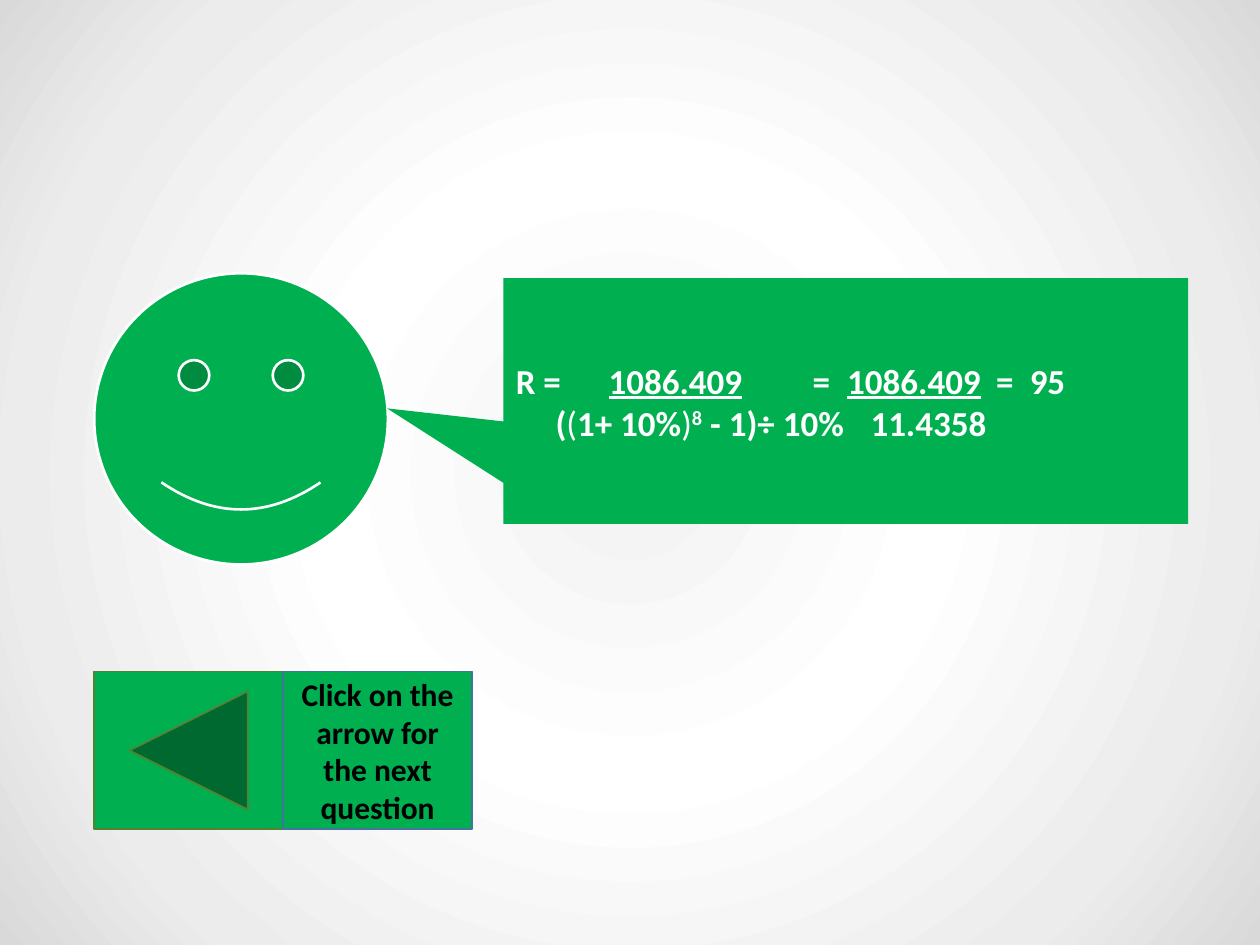
from lxml import etree
from pptx import Presentation
from pptx.dml.color import RGBColor
from pptx.enum import shapes, text
from pptx.oxml import parse_xml
from pptx.oxml.ns import nsdecls, qn
from pptx.util import Cm, Pt

GREEN, WHITE, BLACK = "00B050", "FFFFFF", "000000"


def colour(hex_code):
    return RGBColor.from_string(hex_code)


def add_green_shape(slide, kind, box, line=None, width=1):
    shape = slide.shapes.add_shape(kind, *(Cm(length) for length in box))
    shape.shadow.inherit = False
    shape.fill.solid()
    shape.fill.fore_color.rgb = colour(GREEN)
    if line:
        shape.line.color.rgb = colour(line)
        shape.line.width = Pt(width)
    else:
        shape.line.fill.background()
    return shape


def format_run(run, size, hex_code, bold=True):
    run.font.name = "Calibri"
    run.font.size = Pt(size)
    run.font.bold = bold
    run.font.color.rgb = colour(hex_code)


def set_background(slide):
    stops = [(0, "F2F2F2"), (39, WHITE), (78, "ECECEC"), (100, "D9D9D9")]
    stop_xml = "".join(
        f'<a:gs pos="{percent * 1000}"><a:srgbClr val="{hex_code}"/></a:gs>'
        for percent, hex_code in stops)
    slide.background.fill.gradient()
    gradient = slide.background._cSld.find(".//" + qn("a:gradFill"))
    gradient.getparent().replace(gradient, parse_xml(
        f'<a:gradFill {nsdecls("a")} rotWithShape="1"><a:gsLst>{stop_xml}</a:gsLst>'
        '<a:path path="circle"><a:fillToRect l="50000" t="50000" r="50000" b="50000"/>'
        '</a:path></a:gradFill>'))


def set_tab_stops(paragraph, positions):
    tabs = etree.SubElement(paragraph._p.get_or_add_pPr(), qn("a:tabLst"))
    for position in positions:
        etree.SubElement(tabs, qn("a:tab"), pos=str(Cm(position)), algn="l")


def add_formula_line(paragraph, parts, tab_stops):
    """Each part is its wording and a style: u underlined, r regular, s superscript."""
    paragraph.alignment = text.PP_ALIGN.LEFT
    set_tab_stops(paragraph, tab_stops)
    for wording, style in parts:
        run = paragraph.add_run()
        run.text = wording
        format_run(run, 20, WHITE, bold=style != "r")
        run.font.underline = style == "u"
        if style == "s":
            run.font._element.set("baseline", "30000")


def add_speaker(slide, left, top, width, height):
    # Smiling face
    add_green_shape(slide, shapes.MSO_SHAPE.SMILEY_FACE,
                    (left, top, 5.92, height), WHITE, 1.5)

    # Speech callout with the worked formula
    callout_left = 8.25
    callout = add_green_shape(
        slide, shapes.MSO_SHAPE.RECTANGULAR_CALLOUT,
        (left + callout_left, top + 0.1, width - callout_left, 4.95))
    callout.adjustments[0] = -0.67
    callout.adjustments[1] = 0.03
    frame = callout.text_frame
    frame.word_wrap = True
    frame.vertical_anchor = text.MSO_ANCHOR.MIDDLE
    add_formula_line(
        frame.paragraphs[0],
        [("R =", ""), ("\t1086.409\t", "u"), ("=\t", ""), ("1086.409", "u"),
         ("\t=\t95\t", ""), ("\t", "u")],
        [1.87, 5.98, 6.68, 9.68, 10.36, 11.4, 11.72])
    denominator = frame.add_paragraph()
    add_formula_line(
        denominator,
        [("(", ""), ("(", "r"), ("1+ 10%", ""), (")", "r"), ("8", "s"),
         (" - 1)÷ 10%\t11.4358", "")],
        [7.26])
    properties = denominator._p.get_or_add_pPr()
    properties.set("marL", str(Cm(0.8)))
    properties.set("indent", "0")


def add_next_question(slide, left, top, width, height):
    half = width / 2
    # Arrow button
    add_green_shape(slide, shapes.MSO_SHAPE.ACTION_BUTTON_BACK_OR_PREVIOUS,
                    (left, top, half, height), "548235")

    # Instruction
    instruction = add_green_shape(slide, shapes.MSO_SHAPE.PENTAGON,
                                  (left + half, top, half, height), "43739E")
    instruction.adjustments[0] = 0
    instruction._element.spPr.find(qn("a:xfrm")).set("flipH", "1")
    frame = instruction.text_frame
    frame.word_wrap = True
    frame.vertical_anchor = text.MSO_ANCHOR.MIDDLE
    frame.text = "Click on the arrow for the next question"
    frame.paragraphs[0].alignment = text.PP_ALIGN.CENTER
    format_run(frame.paragraphs[0].runs[0], 18, BLACK)


def main():
    presentation = Presentation()
    presentation.slide_width = Cm(25.4)
    presentation.slide_height = Cm(19.05)
    slide = presentation.slides.add_slide(presentation.slide_layouts[6])
    set_background(slide)
    add_speaker(slide, 1.9, 5.51, 22.05, 5.87)
    add_next_question(slide, 1.9, 13.54, 7.62, 3.18)
    presentation.save("out.pptx")


if __name__ == "__main__":
    main()
